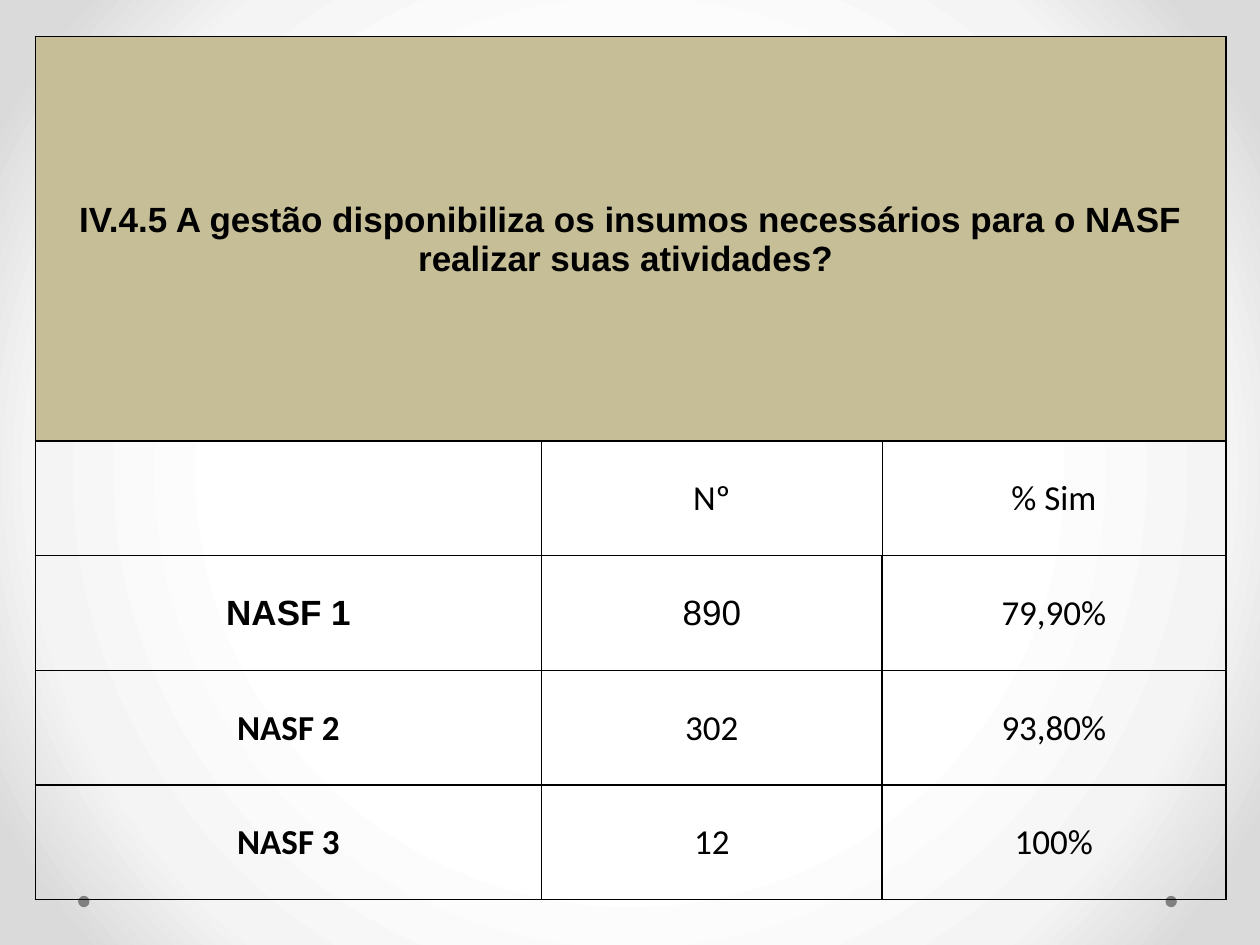
from dataclasses import dataclass

from lxml.etree import SubElement
from pptx import Presentation
from pptx.dml.color import RGBColor
from pptx.enum.shapes import MSO_SHAPE
from pptx.enum.text import MSO_ANCHOR, PP_ALIGN
from pptx.oxml.ns import qn
from pptx.util import Inches, Pt


@dataclass(frozen=True)
class Theme:
    """Colours, fonts and sizes of the slide."""
    ink: str = "000000"
    band: str = "C5BE97"
    dot: str = "808080"
    glow: tuple = ((50, "FFFFFF"), (76, "F4F4F4"), (92, "DADADA"))
    heading_font: str = "Arial"
    body_font: str = "Calibri"
    text_size: int = 20
    border: float = 1
    thin_border: float = 0.5


THEME = Theme()
QUESTION = "IV.4.5 A gestão disponibiliza os insumos necessários para o NASF realizar suas atividades? "
ANSWERS = [
    ["", "Nº", "% Sim"],
    ["NASF 1", "890", "79,90%"],
    ["NASF 2", "302", "93,80%"],
    ["NASF 3", "12", "100%"],
]
ARIAL_CELLS = {(0, 0), (2, 0), (2, 1)}
CELL_FORMAT = {
    "vertical_anchor": MSO_ANCHOR.MIDDLE,
    "margin_left": Inches(0.01),
    "margin_top": Inches(0.01),
    "margin_right": Inches(0.01),
    "margin_bottom": 0,
}


def apply_format(target, values):
    """Set every attribute in values on target."""
    for name, value in values.items():
        setattr(target, name, value)


def paint_background(slide):
    """Fill the slide with a circular gradient from the centre."""
    slide.background.fill.gradient()
    gradient = next(slide.element.iter(qn("a:gradFill")))
    for child in list(gradient):
        gradient.remove(child)
    stops = SubElement(gradient, qn("a:gsLst"))
    for percent, colour in THEME.glow:
        stop = SubElement(stops, qn("a:gs"), pos=str(percent * 1000))
        SubElement(stop, qn("a:srgbClr"), val=colour)
    circle = SubElement(gradient, qn("a:path"), {"path": "circle"})
    SubElement(circle, qn("a:fillToRect"), {side: "50000" for side in "ltrb"})


def add_dots(slide, lefts, top, size):
    """Place one footer dot at each left position."""
    for left in lefts:
        dot = slide.shapes.add_shape(MSO_SHAPE.OVAL, left, top, size, size)
        dot.shadow.inherit = False
        dot.fill.solid()
        dot.fill.fore_color.rgb = RGBColor.from_string(THEME.dot)
        dot.line.fill.background()


def draw_borders(cell, widths):
    """Draw the four cell borders, with widths in points by side."""
    properties = cell._tc.get_or_add_tcPr()
    for index, side in enumerate("LRTB"):
        width = str(Pt(widths.get(side, THEME.border)))
        line = SubElement(properties, qn(f"a:ln{side}"), w=width)
        fill = SubElement(line, qn("a:solidFill"))
        SubElement(fill, qn("a:srgbClr"), val=THEME.ink)
        properties.insert(index, line)


def write_cell(cell, text, font, bold):
    """Write centred text in a cell."""
    apply_format(cell, CELL_FORMAT)
    paragraph = cell.text_frame.paragraphs[0]
    paragraph.alignment = PP_ALIGN.CENTER
    paragraph.font.size = Pt(THEME.text_size)
    if text:
        run = paragraph.add_run()
        run.text = text
        apply_format(run.font, {"name": font, "size": Pt(THEME.text_size), "bold": bold})
        run.font.color.rgb = RGBColor.from_string(THEME.ink)


def add_answer_table(slide, left, top, width, height):
    """Place the question band and its answers in the given box."""
    rows = [[QUESTION, "", ""], *ANSWERS]
    table = slide.shapes.add_table(len(rows), 3, left, top, width, height).table
    apply_format(table, {"first_row": False, "horz_banding": False})
    for column, share in zip(table.columns, (4.02, 2.7, 2.73)):
        column.width = int(width * share / 9.45)
    answer_height = Inches(0.91)
    for row in table.rows:
        row.height = answer_height
    table.rows[0].height = height - answer_height * len(ANSWERS)
    thin_sides = {(1, 1): "R", (1, 2): "L"}
    for r, texts in enumerate(rows):
        for c, text in enumerate(texts):
            cell = table.cell(r, c)
            font = THEME.heading_font if (r, c) in ARIAL_CELLS else THEME.body_font
            write_cell(cell, text, font, c == 0)
            if r == 0:
                cell.fill.solid()
                cell.fill.fore_color.rgb = RGBColor.from_string(THEME.band)
            else:
                cell.fill.background()
            draw_borders(cell, {side: THEME.thin_border for side in thin_sides.get((r, c), "")})
    table.cell(0, 0).merge(table.cell(0, 2))


def main():
    """Build and save the slide."""
    deck = Presentation()
    apply_format(deck, {"slide_width": Inches(10), "slide_height": Inches(7.5)})
    slide = deck.slides.add_slide(deck.slide_layouts[6])
    paint_background(slide)
    add_dots(slide, (Inches(9.25), Inches(0.62)), Inches(7.11), Inches(0.09))
    add_answer_table(slide, Inches(0.28), Inches(0.29), Inches(9.45), Inches(6.85))
    deck.save("out.pptx")


if __name__ == "__main__":
    main()
